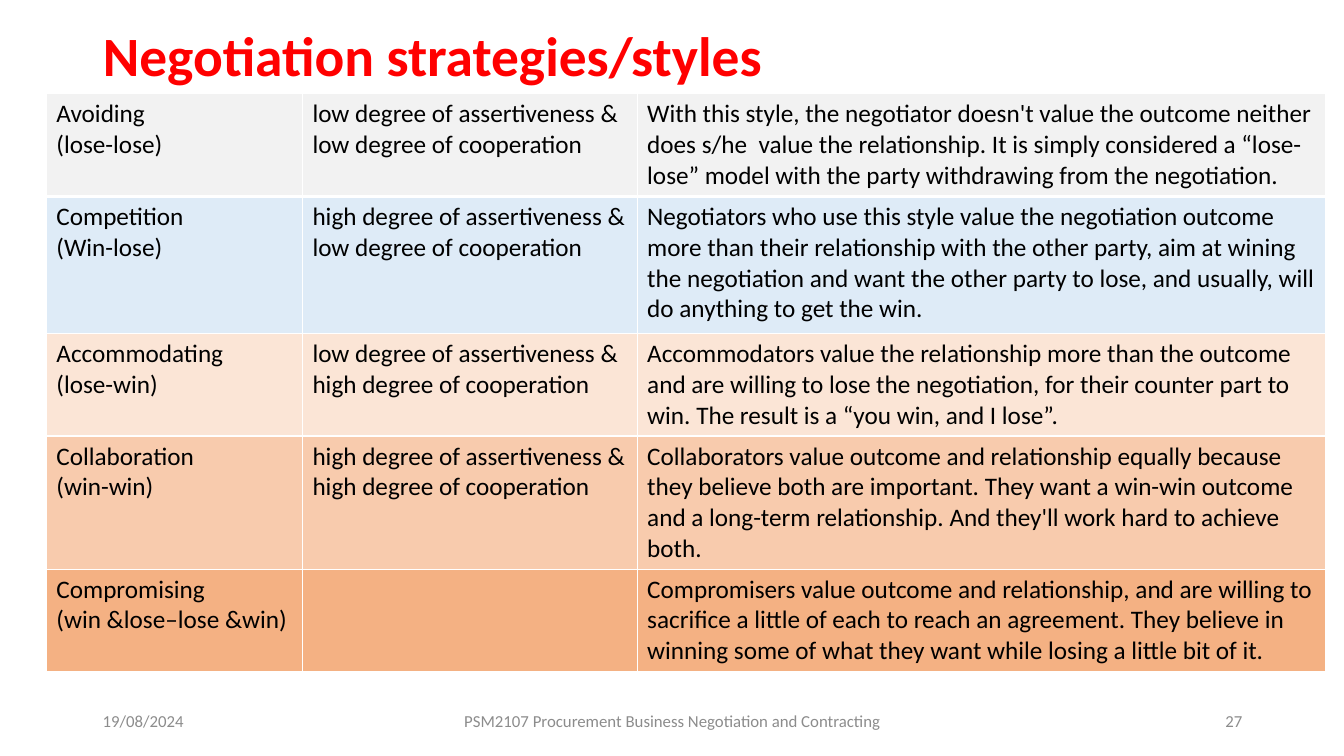
import dataclasses

import lxml.etree
import pptx
import pptx.dml.color
import pptx.enum.text
import pptx.oxml.ns
import pptx.util

PX = 9144
ALIGN = pptx.enum.text.PP_ALIGN
ANCHOR = pptx.enum.text.MSO_ANCHOR


@dataclasses.dataclass(frozen=True)
class Theme:
    font: str = "Calibri"
    title: str = "FF0000"
    body: str = "000000"
    footer: str = "8C8C8C"
    border: str = "FFFFFF"
    title_size: float = 39.6
    body_size: float = 18
    footer_size: float = 12


THEME = Theme()
COLUMN_WIDTHS = (254, 332, 683)
STYLES = (
    (102, "F2F2F2", "Avoiding\n(lose-lose)",
     "low degree of assertiveness & low degree of cooperation",
     "With this style, the negotiator doesn't value the outcome neither does s/he  value the "
     "relationship. It is simply considered a “lose-lose” model with the party withdrawing "
     "from the negotiation."),
    (136, "DEEBF7", "Competition\n(Win-lose)",
     "high degree of assertiveness & low degree of cooperation",
     "Negotiators who use this style value the negotiation outcome more than their "
     "relationship with the other party, aim at wining the negotiation and want the other "
     "party to lose, and usually, will do anything to get the win."),
    (101, "FBE5D6", "Accommodating\n(lose-win)",
     "low degree of assertiveness & high degree of cooperation",
     "Accommodators value the relationship more than the outcome and are willing to lose the "
     "negotiation, for their counter part to win. The result is a “you win, and I lose”."),
    (132, "F8CBAD", "Collaboration\n(win-win)",
     "high degree of assertiveness & high degree of cooperation",
     "Collaborators value outcome and relationship equally because they believe both are "
     "important. They want a win-win outcome and a long-term relationship. And they'll work "
     "hard to achieve both."),
    (102, "F4B183", "Compromising\n(win &lose–lose &win)", "",
     "Compromisers value outcome and relationship, and are willing to sacrifice a little of "
     "each to reach an agreement. They believe in winning some of what they want while "
     "losing a little bit of it."),
)


def rgb(value):
    return pptx.dml.color.RGBColor.from_string(value)


def write(frame, text, size, color, bold=False, align=ALIGN.LEFT, spacing=1.0):
    frame.word_wrap = True
    frame.text = text
    for paragraph in frame.paragraphs:
        paragraph.alignment = align
        paragraph.line_spacing = spacing
        paragraph.font.size = pptx.util.Pt(size)
        for run in paragraph.runs:
            run.font.name = THEME.font
            run.font.size = pptx.util.Pt(size)
            run.font.bold = bold
            run.font.color.rgb = rgb(color)


def set_borders(cell, bottom_width):
    properties = cell._tc.get_or_add_tcPr()
    widths = {"a:lnL": 1, "a:lnR": 1, "a:lnT": 1, "a:lnB": bottom_width}
    for position, (tag, width) in enumerate(widths.items()):
        line = lxml.etree.Element(pptx.oxml.ns.qn(tag), w=str(pptx.util.Pt(width)))
        fill = lxml.etree.SubElement(line, pptx.oxml.ns.qn("a:solidFill"))
        lxml.etree.SubElement(fill, pptx.oxml.ns.qn("a:srgbClr"), val=THEME.border)
        properties.insert(position, line)


def add_title(slide, left, top, width, height):
    title = slide.shapes.title
    title.left, title.top, title.width, title.height = (
        value * PX for value in (left, top, width, height))
    frame = title.text_frame
    frame.auto_size = pptx.enum.text.MSO_AUTO_SIZE.NONE
    frame.vertical_anchor = ANCHOR.MIDDLE
    write(frame, "Negotiation strategies/styles", THEME.title_size, THEME.title,
          bold=True, spacing=0.9)


def add_styles_table(slide, left, top):
    width = sum(COLUMN_WIDTHS)
    height = sum(style[0] for style in STYLES)
    table = slide.shapes.add_table(len(STYLES), len(COLUMN_WIDTHS), left * PX, top * PX,
                                   width * PX, height * PX).table
    table.first_row = False
    table.horz_banding = False
    for column, column_width in zip(table.columns, COLUMN_WIDTHS):
        column.width = column_width * PX
    for index, (row, (row_height, color, *texts)) in enumerate(zip(table.rows, STYLES)):
        row.height = row_height * PX
        for cell, text in zip(row.cells, texts):
            cell.fill.solid()
            cell.fill.fore_color.rgb = rgb(color)
            set_borders(cell, 3 if index == 0 else 1)
            write(cell.text_frame, text, THEME.body_size, THEME.body)


def add_footer(slide, left, top, width, height):
    side = 300
    center = 450
    items = (
        ("19/08/2024", left, side, ALIGN.LEFT),
        ("PSM2107 Procurement Business Negotiation and Contracting",
         left + (width - center) // 2, center, ALIGN.CENTER),
        ("27", left + width - side, side, ALIGN.RIGHT),
    )
    for text, item_left, item_width, align in items:
        box = slide.shapes.add_textbox(item_left * PX, top * PX, item_width * PX, height * PX)
        box.text_frame.vertical_anchor = ANCHOR.MIDDLE
        write(box.text_frame, text, THEME.footer_size, THEME.footer, align=align)


def main():
    presentation = pptx.Presentation()
    presentation.slide_width = 1333 * PX
    presentation.slide_height = 750 * PX
    slide = presentation.slides.add_slide(presentation.slide_layouts[5])
    add_title(slide, 92, 23, 1150, 70)
    add_styles_table(slide, 46, 93)
    add_footer(slide, 92, 695, 1150, 40)
    presentation.save("out.pptx")


if __name__ == "__main__":
    main()
